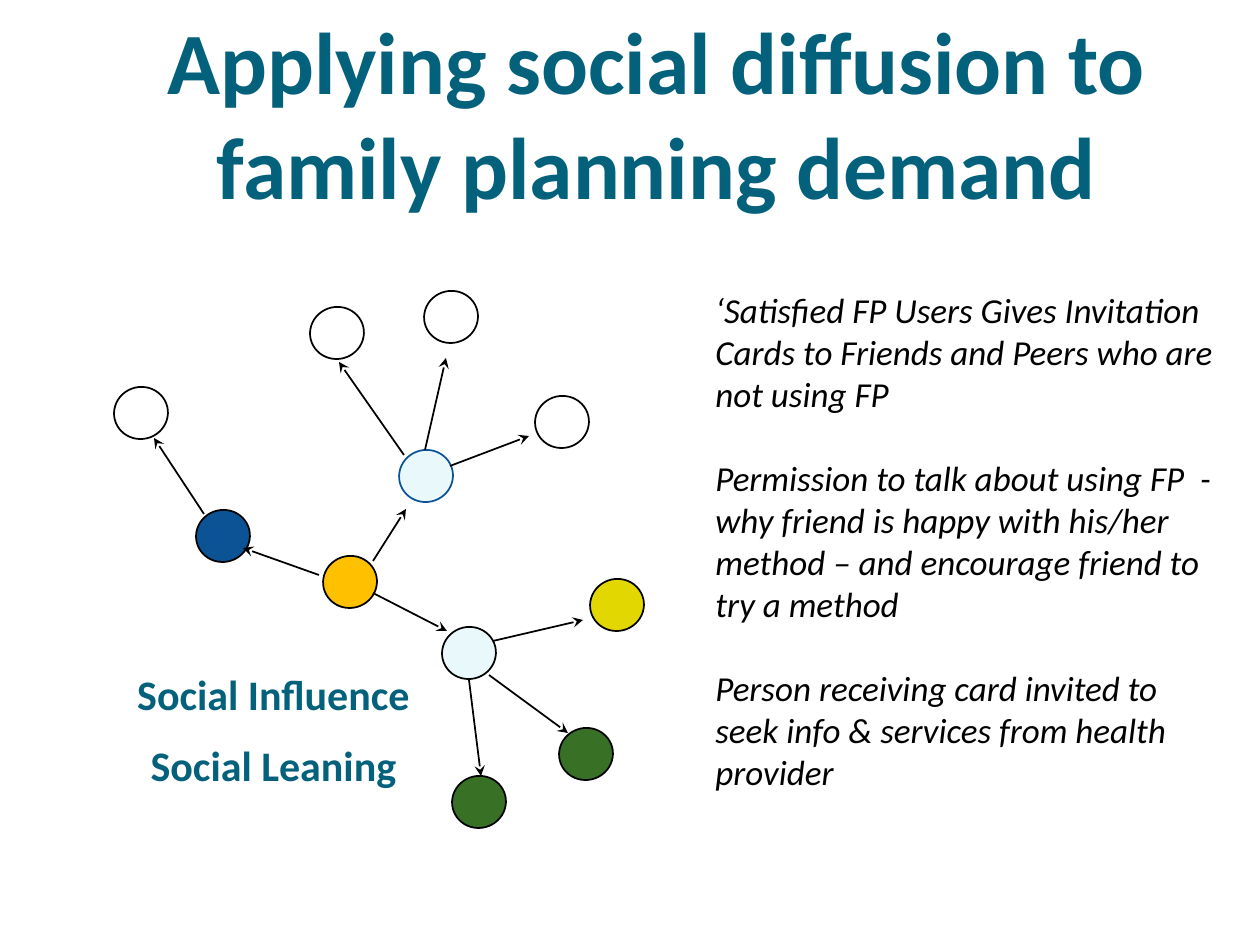
from typing import NamedTuple, Optional

from lxml import etree
from pptx import Presentation
from pptx.dml.color import RGBColor
from pptx.enum import shapes, text
from pptx.oxml import ns
from pptx.util import Emu, Pt

PX = 914400 / 126
BLACK, WHITE, TEAL = "000000", "FFFFFF", "04617B"
PALE, BLUE, GREEN = "E9F9FB", "0B5394", "387026"


class Person(NamedTuple):
    x: int
    y: int
    fill: Optional[str]
    line: str = BLACK


class Influence(NamedTuple):
    x1: int
    y1: int
    x2: int
    y2: int


class Block(NamedTuple):
    box: tuple[int, int, int, int]
    paragraphs: tuple[str, ...]
    size: int
    color: str
    gap: int = 0
    indent: int = 0
    bold: bool = False
    italic: bool = False
    wrap: bool = True
    align: text.PP_ALIGN = text.PP_ALIGN.CENTER


PEOPLE = [
    Person(451, 317, WHITE),
    Person(141, 413, WHITE),
    Person(337, 333, None),
    Person(469, 653, PALE),
    Person(426, 476, PALE, BLUE),
    Person(223, 536, BLUE),
    Person(617, 605, "E2D700"),
    Person(350, 582, "FFC000"),
    Person(562, 422, None),
    Person(479, 802, GREEN),
    Person(586, 754, GREEN),
]

INFLUENCES = [
    Influence(450, 466, 529, 436),
    Influence(404, 455, 339, 362),
    Influence(425, 450, 446, 358),
    Influence(319, 575, 243, 548),
    Influence(373, 561, 406, 509),
    Influence(373, 593, 447, 631),
    Influence(204, 514, 154, 438),
    Influence(469, 680, 481, 776),
    Influence(493, 641, 583, 620),
    Influence(489, 675, 568, 733),
]

TITLE = Block((94, 59, 1126, 158), ("Applying social diffusion to family planning demand",),
              50, TEAL, bold=True)
STEPS = Block(
    (655, 282, 581, 518),
    ("‘Satisfied FP Users Gives Invitation Cards to Friends and Peers who are not using FP",
     "Permission to talk about using FP  - why friend is happy with his/her method – "
     "and encourage friend to try a method",
     "Person receiving card invited to seek info & services from health provider"),
    20, BLACK, gap=24, indent=48, italic=True, align=text.PP_ALIGN.LEFT)
CAPTION = Block((123, 662, 301, 136), ("Social Influence", "Social Leaning"),
                24, TEAL, gap=12, bold=True, wrap=False)


def px(value: float) -> Emu:
    return Emu(round(value * PX))


def rgb(color: str) -> RGBColor:
    return RGBColor.from_string(color)


def add_block(slide, block: Block):
    frame = slide.shapes.add_textbox(*map(px, block.box)).text_frame
    frame.word_wrap = block.wrap
    frame.text = "\n".join(block.paragraphs)
    for index, paragraph in enumerate(frame.paragraphs):
        paragraph.alignment = block.align
        if block.indent:
            properties = paragraph._p.get_or_add_pPr()
            properties.set("marL", str(px(block.indent)))
            properties.set("indent", "0")
        if index:
            paragraph.space_before = Pt(block.gap)
        for run in paragraph.runs:
            font = run.font
            font.name, font.size = "Calibri", Pt(block.size)
            font.bold, font.italic = block.bold, block.italic
            font.color.rgb = rgb(block.color)
    return frame


def add_person(slide, person: Person) -> None:
    width, height = 52, 54
    circle = slide.shapes.add_shape(
        shapes.MSO_SHAPE.OVAL, px(person.x - width / 2), px(person.y - height / 2),
        px(width), px(height))
    circle.rotation = 76.6
    circle.shadow.inherit = False
    if person.fill:
        circle.fill.solid()
        circle.fill.fore_color.rgb = rgb(person.fill)
    else:
        circle.fill.background()
    circle.line.color.rgb = rgb(person.line)
    circle.line.width = Pt(1)


def add_influence(slide, influence: Influence) -> None:
    arrow = slide.shapes.add_connector(shapes.MSO_CONNECTOR.STRAIGHT, *map(px, influence))
    arrow.line.color.rgb = rgb(BLACK)
    arrow.line.width = Pt(1)
    etree.SubElement(arrow.line._get_or_add_ln(), ns.qn("a:tailEnd"), type="stealth")
    etree.SubElement(arrow._element.spPr, ns.qn("a:effectLst"))


def main() -> None:
    deck = Presentation()
    deck.slide_width, deck.slide_height = px(1260), px(945)
    slide = deck.slides.add_slide(deck.slide_layouts[6])

    title = add_block(slide, TITLE)
    title.vertical_anchor = text.MSO_ANCHOR.BOTTOM
    title.margin_left = title.margin_right = title.margin_bottom = 0
    add_block(slide, STEPS)
    for person in PEOPLE:
        add_person(slide, person)
    for influence in INFLUENCES:
        add_influence(slide, influence)
    add_block(slide, CAPTION)

    deck.save("out.pptx")


if __name__ == "__main__":
    main()
